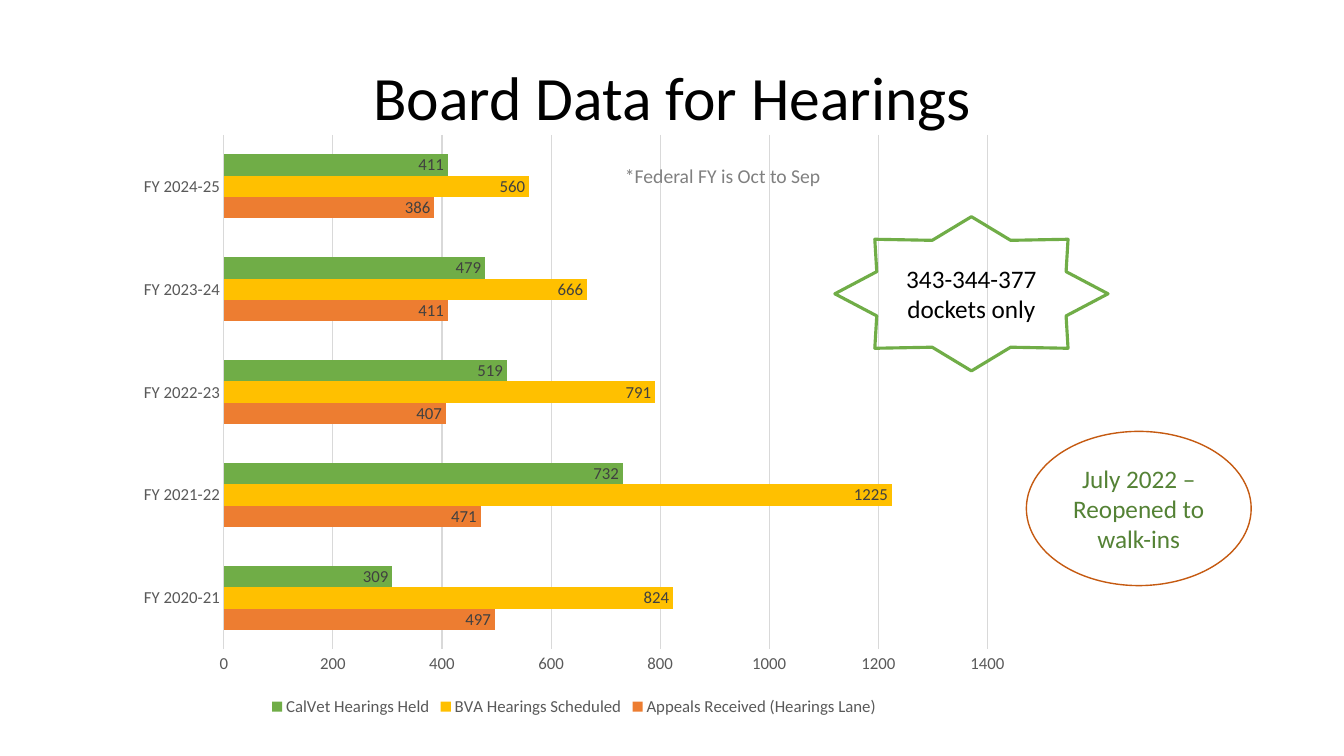
from pptx import Presentation
from pptx.chart.data import CategoryChartData
from pptx.dml.color import RGBColor
from pptx.enum.chart import XL_CHART_TYPE as ChartType, XL_LABEL_POSITION as LabelPosition
from pptx.enum.chart import XL_LEGEND_POSITION as LegendPosition, XL_TICK_MARK as TickMark
from pptx.enum.shapes import MSO_SHAPE as Preset
from pptx.enum.text import MSO_ANCHOR as Anchor, PP_ALIGN as Align
from pptx.util import Inches, Pt

YEARS = ["FY 2020-21", "FY 2021-22", "FY 2022-23", "FY 2023-24", "FY 2024-25"]
HEARING_SERIES = [
    ("Appeals Received (Hearings Lane)", (497, 471, 407, 411, 386), "ED7D31"),
    ("BVA Hearings Scheduled", (824, 1225, 791, 666, 560), "FFC000"),
    ("CalVet Hearings Held", (309, 732, 519, 479, 411), "70AD47"),
]


def color(value):
    return RGBColor.from_string(value)


def apply(target, values):
    for name, value in values.items():
        setattr(target, name, value)


class HearingsSlide:
    """Holds the text style and the current slide, and adds elements to it."""

    font_name = "Calibri"
    grey = "595959"
    rule = "D9D9D9"

    def __init__(self, presentation):
        self.slide = presentation.slides.add_slide(presentation.slide_layouts[6])

    def style_font(self, font, size, hex_color):
        apply(font, {"name": self.font_name, "size": Pt(size), "bold": False})
        font.color.rgb = color(hex_color)

    def style_line(self, line, width, hex_color):
        line.color.rgb = color(hex_color)
        line.width = Pt(width)

    def fill_text(self, shape, text, size, hex_color, align, anchor, spacing=1.0):
        frame = shape.text_frame
        apply(frame, {"word_wrap": True, "vertical_anchor": anchor})
        paragraph = frame.paragraphs[0]
        apply(paragraph, {"text": text, "alignment": align, "line_spacing": spacing})
        self.style_font(paragraph.runs[0].font, size, hex_color)

    def add_text(self, box, *text_style):
        shape = self.slide.shapes.add_textbox(*map(Inches, box))
        self.fill_text(shape, *text_style)

    def add_callout(self, preset, box, text, text_color, line_color, line_width):
        shape = self.slide.shapes.add_shape(preset, *map(Inches, box))
        shape.shadow.inherit = False
        shape.fill.background()
        self.style_line(shape.line, line_width, line_color)
        self.fill_text(shape, text, 18, text_color, Align.CENTER, Anchor.MIDDLE)

    def add_bar_chart(self, box, categories, series_rows):
        data = CategoryChartData()
        data.categories = categories
        for name, values, _ in series_rows:
            data.add_series(name, values)
        chart = self.slide.shapes.add_chart(
            ChartType.BAR_CLUSTERED, *map(Inches, box), data).chart
        apply(chart, {"has_title": False, "has_legend": True})
        self.style_font(chart.font, 10, "000000")
        apply(chart.legend, {"position": LegendPosition.BOTTOM, "include_in_layout": False})
        self.style_font(chart.legend.font, 12, self.grey)
        for axis in (chart.category_axis, chart.value_axis):
            apply(axis, {"major_tick_mark": TickMark.NONE, "minor_tick_mark": TickMark.NONE})
            self.style_font(axis.tick_labels.font, 12, self.grey)
        self.style_line(chart.category_axis.format.line, 0.75, self.rule)
        value_axis = chart.value_axis
        apply(value_axis, {"minimum_scale": 0, "maximum_scale": 1400, "major_unit": 200})
        value_axis.format.line.fill.background()
        self.style_line(value_axis.major_gridlines.format.line, 0.75, self.rule)
        plot = chart.plots[0]
        apply(plot, {"gap_width": 182, "overlap": 0, "vary_by_categories": False})
        for series, (_, _, fill_color) in zip(plot.series, series_rows):
            series.format.fill.solid()
            series.format.fill.fore_color.rgb = color(fill_color)
            labels = series.data_labels
            apply(labels, {"show_value": True, "position": LabelPosition.INSIDE_END})
            self.style_font(labels.font, 12, "404040")


def main():
    presentation = Presentation()
    apply(presentation, {"slide_width": Inches(13.33), "slide_height": Inches(7.5)})
    board = HearingsSlide(presentation)
    board.add_text((0.92, 0.4, 11.5, 1.19), "Board Data for Hearings", 44, "000000",
                   Align.CENTER, Anchor.MIDDLE, 0.9)
    board.add_bar_chart((1.25, 1.22, 8.89, 5.93), YEARS, HEARING_SERIES)
    board.add_callout(Preset.OVAL, (10.18, 4.28, 2.23, 1.53),
                      "July 2022 – Reopened to walk-ins", "548235", "C55A11", 1)
    board.add_callout(Preset.STAR_8_POINT, (8.28, 2.15, 2.71, 1.53),
                      "343-344-377 dockets only", "000000", "70AD47", 2.25)
    board.add_text((6.1, 1.58, 2.71, 0.34), "*Federal FY is Oct to Sep", 14, "808080",
                   Align.LEFT, Anchor.TOP)
    presentation.save("out.pptx")


if __name__ == "__main__":
    main()
